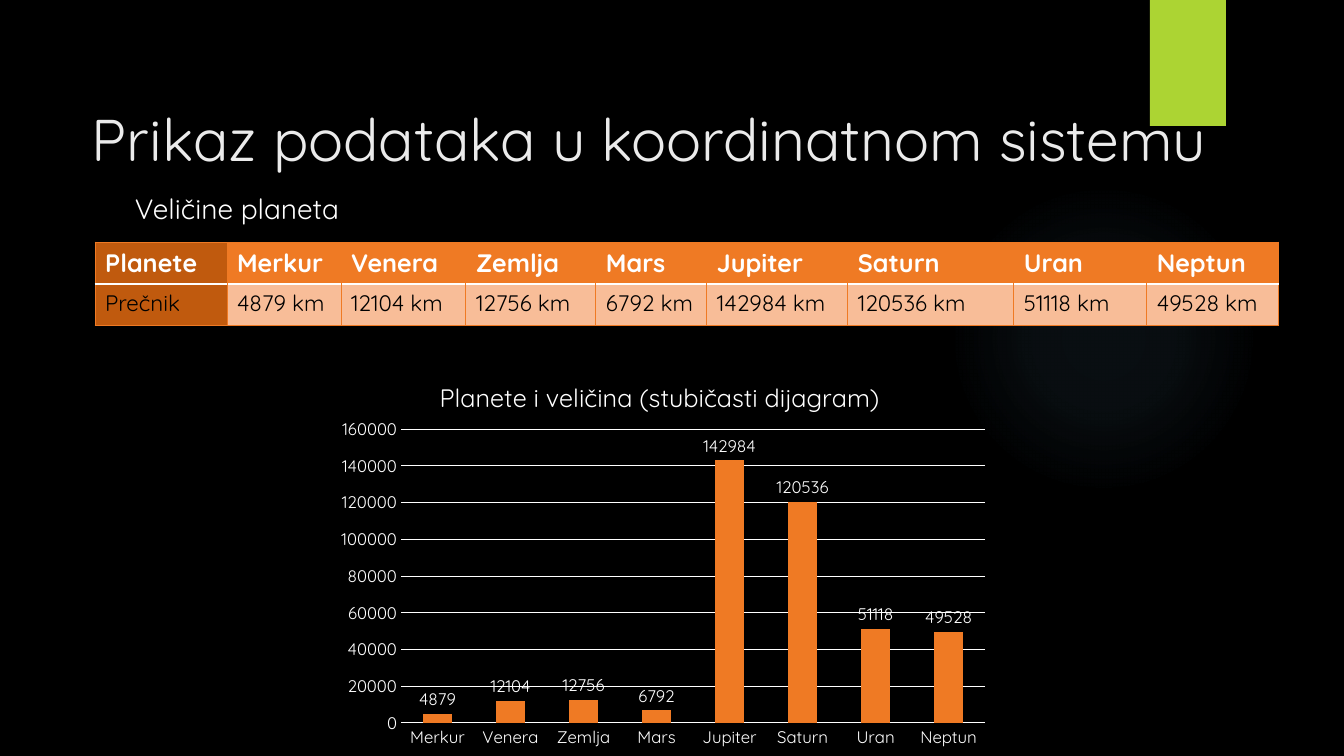
"""Build a slide showing planet diameters as a table and a column chart."""
from lxml.etree import SubElement
from pptx import Presentation
from pptx.chart.data import CategoryChartData
from pptx.dml.color import RGBColor
from pptx.enum.chart import XL_CHART_TYPE, XL_LABEL_POSITION, XL_TICK_MARK
from pptx.enum.shapes import MSO_SHAPE
from pptx.oxml import parse_xml
from pptx.oxml.ns import nsdecls, qn
from pptx.util import Pt

PX = 9144000 / 1008
FONT = "Quicksand"
BLACK = RGBColor(0x00, 0x00, 0x00)
WHITE = RGBColor(0xFF, 0xFF, 0xFF)
PALE = RGBColor(0xEB, 0xEB, 0xEB)
GREEN = RGBColor(0xAC, 0xD4, 0x33)
ORANGE = RGBColor(0xEF, 0x7A, 0x24)
DARK_ORANGE = RGBColor(0xC0, 0x5A, 0x0E)
LIGHT_ORANGE = RGBColor(0xF8, 0xBD, 0x98)
GLOW = RGBColor(0x7A, 0xC4, 0xF0)

DIAMETERS = {
    "Merkur": 4879, "Venera": 12104, "Zemlja": 12756, "Mars": 6792,
    "Jupiter": 142984, "Saturn": 120536, "Uran": 51118, "Neptun": 49528,
}


def px(*lengths):
    return [round(length * PX) for length in lengths]


def set_layout(parent, index, **fractions):
    for old in parent.findall(qn("c:layout")):
        parent.remove(old)
    layout = parse_xml(f'<c:layout {nsdecls("c")}><c:manualLayout/></c:layout>')
    for tag, value in fractions.items():
        SubElement(layout[0], qn(f"c:{tag}")).set("val", str(value))
    parent.insert(index, layout)


deck = Presentation()
deck.slide_width, deck.slide_height = px(1344, 756)
page = deck.slides.add_slide(deck.slide_layouts[6])
page.background.fill.solid()
page.background.fill.fore_color.rgb = BLACK

glow = page.shapes.add_shape(MSO_SHAPE.OVAL, *px(949, 184, 310, 310))
tab = page.shapes.add_shape(MSO_SHAPE.RECTANGLE, *px(1150, 0, 76, 126))
for shape in (glow, tab):
    shape.shadow.inherit = False
    shape.line.fill.background()
    shape.fill.solid()
    shape.fill.fore_color.rgb = GREEN
stops = "".join(
    f'<a:gs pos="{place * 1000}"><a:srgbClr val="{GLOW}">'
    f'<a:alpha val="{alpha * 1000}"/></a:srgbClr></a:gs>'
    for place, alpha in ((0, 7), (36, 6), (69, 0), (100, 0))
)
gradient = parse_xml(
    f'<a:gradFill {nsdecls("a")}><a:gsLst>{stops}</a:gsLst><a:path path="circle">'
    '<a:fillToRect l="50000" t="50000" r="50000" b="50000"/></a:path></a:gradFill>'
)
solid = glow.element.spPr.find(qn("a:solidFill"))
solid.getparent().replace(solid, gradient)

for text, bounds, size, color in (
    ("Prikaz podataka u koordinatnom sistemu", (82, 98, 1198, 154), 42, PALE),
    ("Veličine planeta", (125, 187, 986, 463), 20, WHITE),
):
    box = page.shapes.add_textbox(*px(*bounds))
    box.text_frame.word_wrap = True
    box.text_frame.text = text
    font = box.text_frame.paragraphs[0].runs[0].font
    font.name, font.size, font.color.rgb = FONT, Pt(size), color

rows = [
    ["Planete", *DIAMETERS],
    ["Prečnik", *(f"{value} km" for value in DIAMETERS.values())],
]
table = page.shapes.add_table(2, 9, *px(95, 242, 1184, 83)).table
for column, width in zip(table.columns, (132, 114, 125, 130, 111, 141, 166, 133, 132)):
    column.width = px(width)[0]
for row, height in zip(table.rows, (42, 41)):
    row.height = px(height)[0]
for row_index, texts in enumerate(rows):
    header = row_index == 0
    for column_index, text in enumerate(texts):
        cell = table.cell(row_index, column_index)
        cell.text = text
        font = cell.text_frame.paragraphs[0].runs[0].font
        font.name, font.bold = FONT, header
        font.size = Pt(18 if header else 16)
        font.color.rgb = WHITE if header else BLACK
        cell.fill.solid()
        body_color = ORANGE if header else LIGHT_ORANGE
        cell.fill.fore_color.rgb = body_color if column_index else DARK_ORANGE
        edges = {
            "lnL": ORANGE if not header or column_index == 0 else None,
            "lnR": ORANGE if not header or column_index == 8 else None,
            "lnT": ORANGE if header else WHITE,
            "lnB": WHITE if header else ORANGE,
        }
        properties = cell._tc.get_or_add_tcPr()
        for position, (tag, color) in enumerate(edges.items()):
            paint = "<a:noFill/>"
            if color is not None:
                paint = f'<a:solidFill><a:srgbClr val="{color}"/></a:solidFill>'
            width = Pt(1.5 if color == WHITE else 0.75)
            border = f'<a:{tag} {nsdecls("a")} w="{width}">{paint}</a:{tag}>'
            properties.insert(position, parse_xml(border))

data = CategoryChartData()
data.categories = list(DIAMETERS)
data.add_series("Series 1", list(DIAMETERS.values()))
chart = page.shapes.add_chart(
    XL_CHART_TYPE.COLUMN_CLUSTERED, *px(328, 355, 670, 401), data
).chart
chart.has_legend = False
chart.font.name, chart.font.size, chart.font.color.rgb = FONT, Pt(12), WHITE

title = chart.chart_title
title.text_frame.text = "Planete i veličina (stubičasti dijagram)"
font = title.text_frame.paragraphs[0].runs[0].font
font.name, font.size, font.bold, font.color.rgb = FONT, Pt(18), False, WHITE
set_layout(title._element, 1, xMode="edge", yMode="edge", x=0.16, y=0.05)
set_layout(
    chart._chartSpace.chart.plotArea, 0, layoutTarget="inner",
    xMode="edge", yMode="edge", x=0.109, y=0.185, w=0.872, h=0.733,
)

for axis in (chart.category_axis, chart.value_axis):
    axis.major_tick_mark = axis.minor_tick_mark = XL_TICK_MARK.NONE
    axis.format.line.fill.background()
chart.value_axis.minimum_scale = 0
chart.value_axis.maximum_scale = 160000
chart.value_axis.major_unit = 20000
gridlines = chart.value_axis.major_gridlines.format.line
gridlines.width = Pt(0.75)
gridlines.color.rgb = WHITE

plot = chart.plots[0]
plot.gap_width = 150
plot.vary_by_categories = False
series = plot.series[0]
series.format.fill.solid()
series.format.fill.fore_color.rgb = ORANGE
labels = series.data_labels
labels.show_value = True
labels.position = XL_LABEL_POSITION.OUTSIDE_END
labels.font.name, labels.font.size, labels.font.color.rgb = FONT, Pt(12), WHITE

deck.save("out.pptx")
